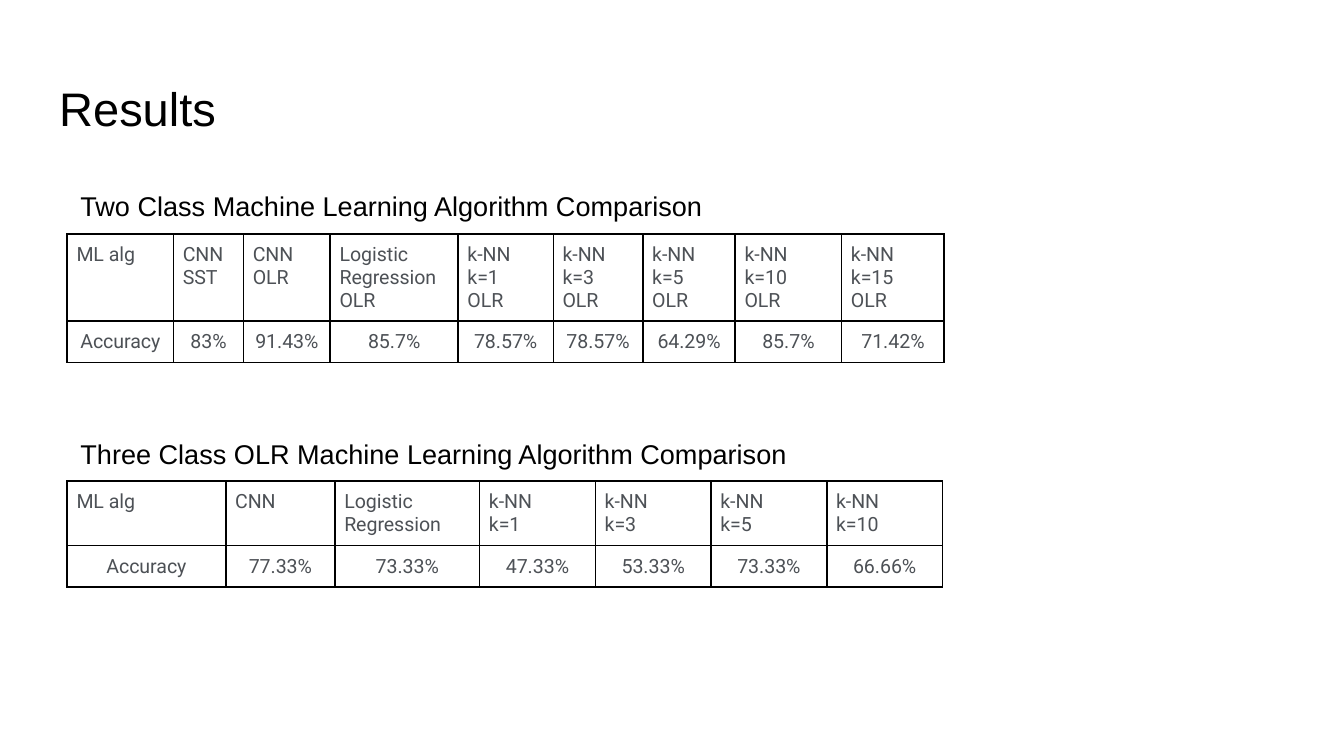
"""Build the results slide with two captioned score tables."""
import dataclasses

import lxml.etree
import pptx
import pptx.dml.color
import pptx.enum.text
import pptx.oxml.ns
import pptx.util

Pt = pptx.util.Pt
Align = pptx.enum.text.PP_ALIGN
Anchor = pptx.enum.text.MSO_ANCHOR
HUES = {"ink": "000000", "cell": "4D5156"}
LEFT = 36
INSET = 7.2
PAD = 5
LINE = 12.25


@dataclasses.dataclass(frozen=True)
class Column:
    head: str
    score: str
    width: float


@dataclasses.dataclass(frozen=True)
class Panel:
    title: tuple[str, ...]
    span: float
    top: float
    cols: tuple[Column, ...]


PANELS = (
    Panel(("Two Class Machine Learning Algorithm Comparison",), 355.7, 125.3, (
        Column("ML alg", "Accuracy", 57),
        Column("CNN SST", "83%", 37.5),
        Column("CNN OLR", "91.43%", 46.5),
        Column("Logistic Regression\nOLR", "85.7%", 68.5),
        Column("k-NN\nk=1\nOLR", "78.57%", 51),
        Column("k-NN\nk=3\nOLR", "78.57%", 48),
        Column("k-NN\nk=5\nOLR", "64.29%", 49.5),
        Column("k-NN\nk=10\nOLR", "85.7%", 57),
        Column("k-NN\nk=15\nOLR", "71.42%", 55),
    )),
    Panel(("Three Class OLR ", "Machine Learning Algorithm Comparison"), 452.2, 257.8, (
        Column("ML alg", "Accuracy", 85),
        Column("CNN", "77.33%", 58.5),
        Column("Logistic Regression", "73.33%", 77.5),
        Column("k-NN\nk=1", "47.33%", 62),
        Column("k-NN\nk=3", "53.33%", 62),
        Column("k-NN\nk=5", "73.33%", 62),
        Column("k-NN\nk=10", "66.66%", 62),
    )),
)
ROWS = ((PAD * 2 + LINE * 3, PAD * 2 + LINE), (PAD * 2 + LINE * 2, PAD * 2 + LINE))


def add_run(para, text: str, face: str, size: float, hue: str) -> None:
    """Append one styled run."""
    run = para.add_run()
    run.text = text
    run.font.name = face
    run.font.size = Pt(size)
    run.font.color.rgb = pptx.dml.color.RGBColor.from_string(HUES[hue])


def set_frame(frame, anchor) -> None:
    """Set the wrap, insets and anchor of a text frame."""
    frame.word_wrap = True
    frame.auto_size = pptx.enum.text.MSO_AUTO_SIZE.NONE
    frame.vertical_anchor = anchor
    frame.margin_left = frame.margin_right = Pt(INSET)
    frame.margin_top = frame.margin_bottom = Pt(INSET)


def add_edges(cell) -> None:
    """Draw a thin line on each side of a cell."""
    props = cell._tc.get_or_add_tcPr()
    name = pptx.oxml.ns.qn
    for side in "LRTB":
        line = lxml.etree.SubElement(props, name(f"a:ln{side}"), w=str(Pt(1)))
        fill = lxml.etree.SubElement(line, name("a:solidFill"))
        lxml.etree.SubElement(fill, name("a:srgbClr"), val=HUES["ink"])


def fill_cell(cell, text: str, align) -> None:
    """Write one cell, a paragraph for each line."""
    cell.margin_left = cell.margin_right = Pt(PAD)
    cell.margin_top = cell.margin_bottom = Pt(PAD)
    add_edges(cell)
    cell.fill.background()
    frame = cell.text_frame
    for spot, line in enumerate(text.split("\n")):
        para = frame.add_paragraph() if spot else frame.paragraphs[0]
        para.alignment = align
        add_run(para, line, "Roboto", 10.5, "cell")


def add_table(slide, panel: Panel, rows: tuple[float, float]) -> None:
    """Draw the scores of a panel."""
    width = sum(col.width for col in panel.cols)
    shape = slide.shapes.add_table(2, len(panel.cols), Pt(LEFT), Pt(panel.top),
                                   Pt(width), Pt(sum(rows)))
    table = shape.table
    table.first_row = table.horz_banding = False
    for row, height in zip(table.rows, rows):
        row.height = Pt(height)
    for spot, col in enumerate(panel.cols):
        table.columns[spot].width = Pt(col.width)
        fill_cell(table.cell(0, spot), col.head, Align.LEFT)
        fill_cell(table.cell(1, spot), col.score, Align.CENTER)


def add_label(slide, panel: Panel) -> None:
    """Put the caption just above its table."""
    box = slide.shapes.add_textbox(Pt(LEFT), Pt(panel.top - 29.5),
                                   Pt(panel.span), Pt(26.6))
    set_frame(box.text_frame, Anchor.MIDDLE)
    para = box.text_frame.paragraphs[0]
    para.line_spacing = 1.15
    for part in panel.title:
        add_run(para, part, "Arial", 14.5, "ink")


def set_title(slide, text: str) -> None:
    """Place and style the title."""
    title = slide.shapes.title
    title.left, title.top = Pt(24.5), Pt(35.3)
    title.width, title.height = Pt(671), Pt(45.4)
    set_frame(title.text_frame, Anchor.TOP)
    para = title.text_frame.paragraphs[0]
    para.alignment = Align.LEFT
    add_run(para, text, "Arial", 25.2, "ink")


def main() -> None:
    """Build and save the deck."""
    deck = pptx.Presentation()
    deck.slide_width, deck.slide_height = Pt(720), Pt(405)
    slide = deck.slides.add_slide(deck.slide_layouts[5])
    set_title(slide, "Results")
    for panel, rows in zip(PANELS, ROWS):
        add_table(slide, panel, rows)
        add_label(slide, panel)
    deck.save("out.pptx")


if __name__ == "__main__":
    main()
